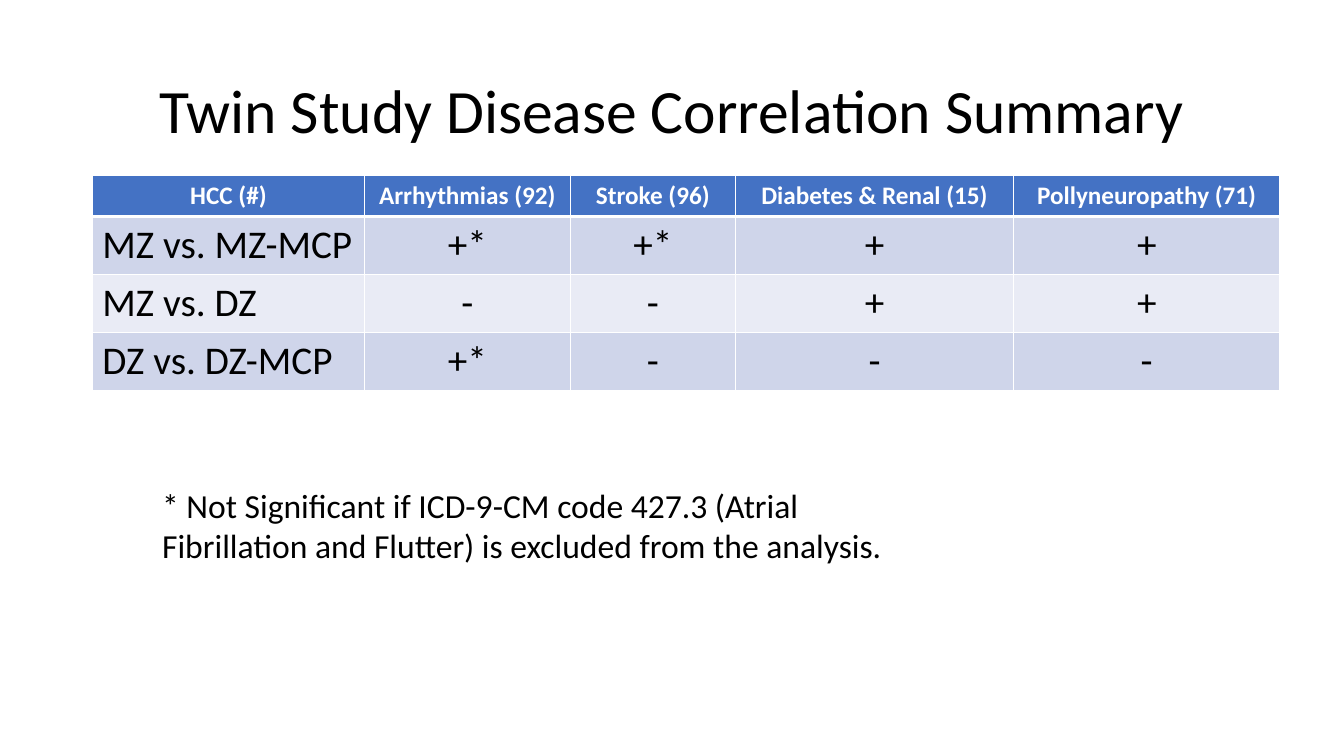
from dataclasses import dataclass

from lxml import etree
from pptx import Presentation
from pptx.dml.color import RGBColor
from pptx.enum.text import MSO_ANCHOR, MSO_AUTO_SIZE, PP_ALIGN
from pptx.oxml.ns import qn
from pptx.util import Pt

LEFT, CENTER = PP_ALIGN.LEFT, PP_ALIGN.CENTER
MIDDLE = MSO_ANCHOR.MIDDLE
GROW, NO_FIT = MSO_AUTO_SIZE.SHAPE_TO_FIT_TEXT, MSO_AUTO_SIZE.NONE


@dataclass(frozen=True)
class Theme:
    font: str = "Calibri"
    text: str = "000000"
    white: str = "FFFFFF"
    header: str = "4472C4"
    bands: tuple = ("CFD5EA", "E9EBF5")
    title_size: float = 44
    header_size: float = 18
    body_size: float = 28
    note_size: float = 24


THEME = Theme()

COL_WIDTHS = (194.4, 146.9, 118.1, 198.7, 190.1)
ROW_HEIGHT = 29.2
ROWS = (
    ("HCC (#)", "Arrhythmias (92)", "Stroke (96)",
     "Diabetes & Renal (15)", "Pollyneuropathy (71)"),
    ("MZ vs. MZ-MCP", "+*", "+*", "+", "+"),
    ("MZ vs. DZ", "-", "-", "+", "+"),
    ("DZ vs. DZ-MCP", "+*", "-", "-", "-"),
)


def write(tf, text, size, color=THEME.text, align=LEFT, bold=False):
    tf.text = text
    p = tf.paragraphs[0]
    p.alignment = align
    font = p.runs[0].font
    font.name, font.size, font.bold = THEME.font, Pt(size), bold
    font.color.rgb = RGBColor.from_string(color)
    return p


def set_borders(cell, bottom):
    tc_pr = cell._tc.get_or_add_tcPr()
    widths = {"a:lnL": 1, "a:lnR": 1, "a:lnT": 1, "a:lnB": bottom}
    for i, (tag, width) in enumerate(widths.items()):
        ln = etree.Element(qn(tag), w=str(Pt(width)))
        fill = etree.SubElement(ln, qn("a:solidFill"))
        etree.SubElement(fill, qn("a:srgbClr"), val=THEME.white)
        tc_pr.insert(i, ln)  # borders precede the cell fill


def add_title(slide, x, y, w, h):
    sp = slide.shapes.title
    sp.left, sp.top, sp.width, sp.height = Pt(x), Pt(y), Pt(w), Pt(h)
    tf = sp.text_frame
    tf.word_wrap, tf.auto_size, tf.vertical_anchor = True, NO_FIT, MIDDLE
    p = write(tf, "Twin Study Disease Correlation Summary",
              THEME.title_size, align=CENTER)
    p.line_spacing = 0.9


def add_correlation_table(slide, x, y):
    frame = slide.shapes.add_table(
        len(ROWS), len(COL_WIDTHS), Pt(x), Pt(y),
        Pt(sum(COL_WIDTHS)), Pt(ROW_HEIGHT * len(ROWS)))
    table = frame.table
    for column, width in zip(table.columns, COL_WIDTHS):
        column.width = Pt(width)
    for r, values in enumerate(ROWS):
        is_header = r == 0
        fill = THEME.header if is_header else THEME.bands[(r - 1) % 2]
        size = THEME.header_size if is_header else THEME.body_size
        color = THEME.white if is_header else THEME.text
        for c, value in enumerate(values):
            cell = table.cell(r, c)
            align = CENTER if is_header or c else LEFT
            write(cell.text_frame, value, size, color, align, is_header)
            cell.fill.solid()
            cell.fill.fore_color.rgb = RGBColor.from_string(fill)
            # The heavier rule is shared by the header and first body row
            set_borders(cell, bottom=3 if is_header else 1)
            if r == 1:
                cell._tc.tcPr.find(qn("a:lnT")).set("w", str(Pt(3)))


def add_footnote(slide, x, y, w, h):
    tf = slide.shapes.add_textbox(Pt(x), Pt(y), Pt(w), Pt(h)).text_frame
    tf.word_wrap, tf.auto_size = True, GROW
    write(tf, "* Not Significant if ICD-9-CM code 427.3 (Atrial Fibrillation "
              "and Flutter) is excluded from the analysis.", THEME.note_size)


def add_summary_slide(prs):
    slide = prs.slides.add_slide(prs.slide_layouts[5])  # title only
    # Title
    add_title(slide, 66, 28.75, 828, 104.4)
    # Correlation table
    add_correlation_table(slide, 66, 125.5)
    # Footnote
    add_footnote(slide, 108.7, 342.7, 574.6, 65.5)


def main():
    prs = Presentation()
    prs.slide_width, prs.slide_height = Pt(960), Pt(540)
    add_summary_slide(prs)
    prs.save("out.pptx")


if __name__ == "__main__":
    main()
